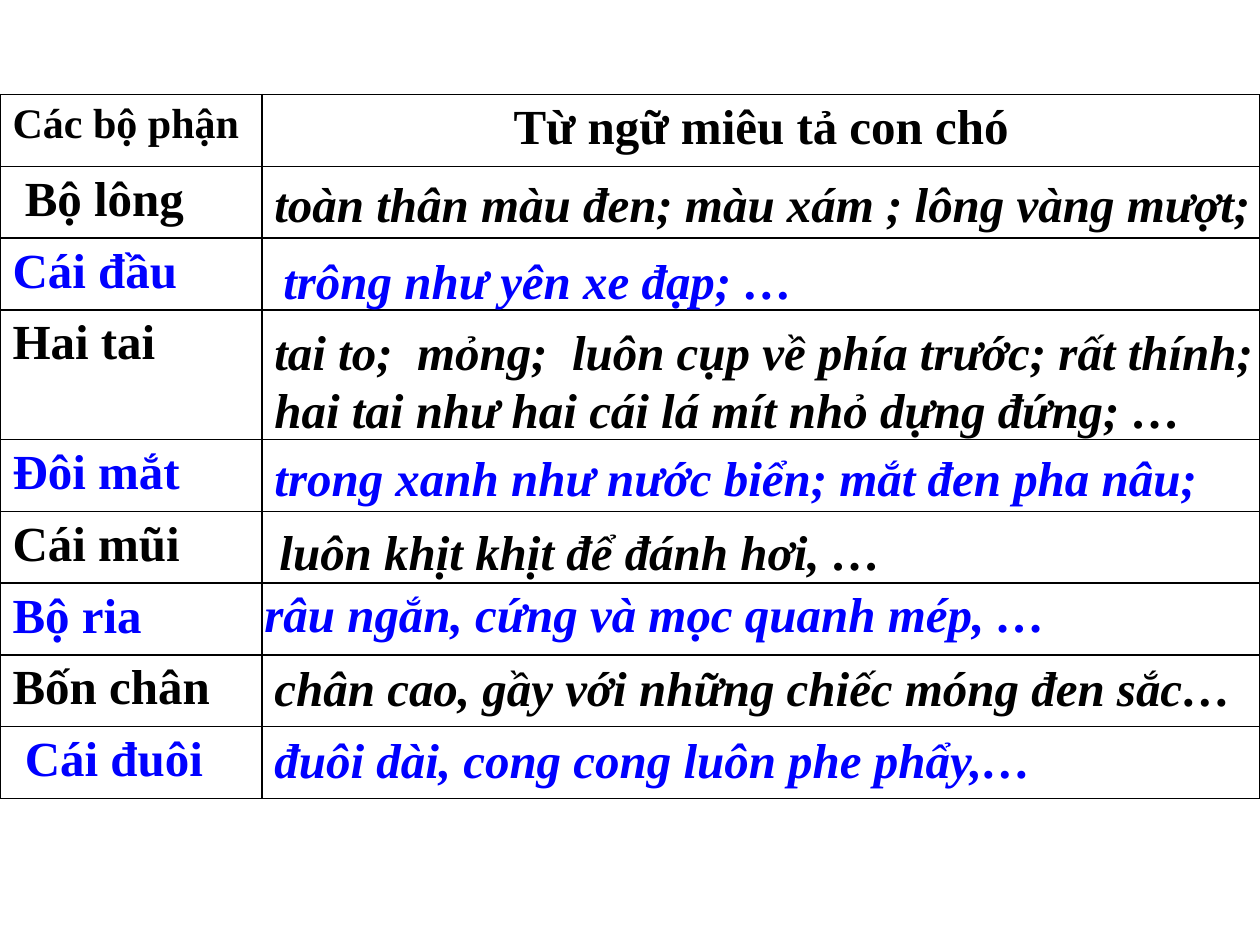
from lxml.etree import SubElement
from pptx import Presentation
from pptx.dml.color import RGBColor
from pptx.enum.text import MSO_AUTO_SIZE, PP_ALIGN
from pptx.oxml.ns import qn
from pptx.util import Inches, Pt

COLORS = {"black": "000000", "blue": "0000FF"}
FONT = {"name": "Times New Roman", "size": Pt(28), "bold": True}


def write(frame, text, color, **extra):
    """Put one formatted run in the frame and return its paragraph."""
    para = frame.paragraphs[0]
    run = para.add_run()
    run.text = text
    for key, value in {**FONT, **extra}.items():
        setattr(run.font, key, value)
    run.font.color.rgb = RGBColor.from_string(COLORS[color])
    return para


def border(cell):
    """Draw thin black lines on all four sides of the cell."""
    props = cell._tc.get_or_add_tcPr()
    for side in ("lnL", "lnR", "lnT", "lnB"):
        line = SubElement(props, qn(f"a:{side}"), w=str(Pt(1)))
        fill = SubElement(line, qn("a:solidFill"))
        SubElement(fill, qn("a:srgbClr"), val=COLORS["black"])


# Body part, colour, description, and the left, top, width, height of its box
PARTS = [
    (" Bộ lông", "black", "toàn thân màu đen; màu xám ; lông vàng mượt;",
     (2.08, 1.33, 8.17, 0.57)),
    ("Cái đầu", "blue", "trông như yên xe đạp; …",
     (2.15, 1.94, 7.92, 0.57)),
    ("Hai tai", "black",
     "tai to;  mỏng;  luôn cụp về phía trước; rất thính; "
     "hai tai như hai cái lá mít nhỏ dựng đứng; …",
     (2.08, 2.5, 8.33, 1.04)),
    ("Đôi mắt", "blue", "trong xanh như nước biển; mắt đen pha nâu;",
     (2.08, 3.5, 7.92, 0.57)),
    ("Cái mũi", "black", "luôn khịt khịt để đánh hơi, …",
     (2.12, 4.09, 7.83, 0.57)),
    ("Bộ ria", "blue", "râu ngắn, cứng và mọc quanh mép, …",
     (2, 4.58, 7.83, 0.57)),
    ("Bốn chân", "black", "chân cao, gầy với những chiếc móng đen sắc…",
     (2.08, 5.17, 7.92, 0.57)),
    (" Cái đuôi", "blue", "đuôi dài, cong cong luôn phe phẩy,…",
     (2.08, 5.74, 7.5, 0.57)),
]

deck = Presentation()
deck.slide_width, deck.slide_height = Inches(10), Inches(7.5)
slide = deck.slides.add_slide(deck.slide_layouts[6])

# Table
heights = [0.57] + [box[3] for *_, box in PARTS]
heights[3] = 1.03
table = slide.shapes.add_table(
    len(heights), 2, Inches(0), Inches(0.75), Inches(10), Inches(sum(heights))
).table
table.first_row = table.horz_banding = False
for column, width in zip(table.columns, (2.08, 7.92)):
    column.width = Inches(width)
for row, height in zip(table.rows, heights):
    row.height = Inches(height)
for cell in table.iter_cells():
    border(cell)
    cell.fill.background()

write(table.cell(0, 0).text_frame, "Các bộ phận", "black", size=Pt(24))
head = write(table.cell(0, 1).text_frame, "Từ ngữ miêu tả con chó", "black")
head.alignment = PP_ALIGN.CENTER

# Part names in the table, descriptions in boxes over it
for index, (part, color, words, box) in enumerate(PARTS, 1):
    write(table.cell(index, 0).text_frame, part, color)
    frame = slide.shapes.add_textbox(*map(Inches, box)).text_frame
    frame.word_wrap = True
    frame.auto_size = MSO_AUTO_SIZE.SHAPE_TO_FIT_TEXT
    write(frame, words, color, italic=True)

deck.save("out.pptx")
